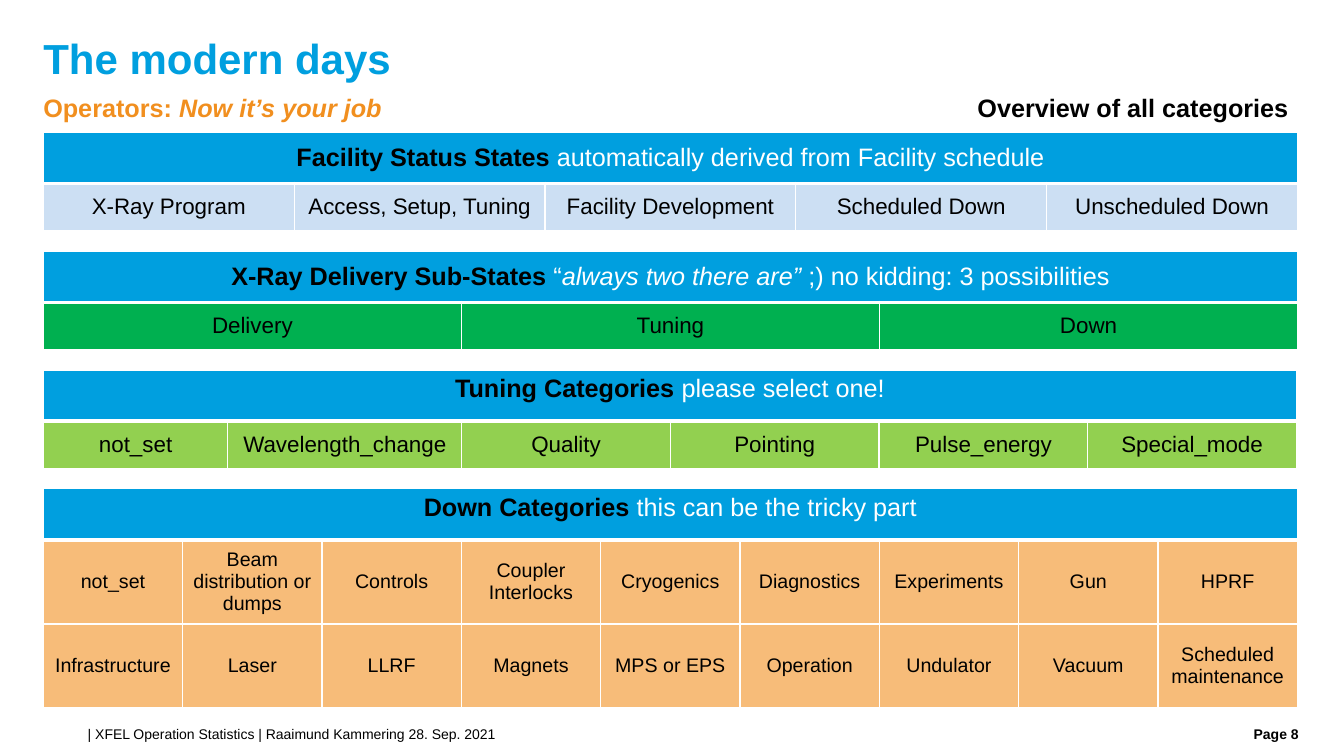
from dataclasses import dataclass

import lxml.etree
import pptx
import pptx.dml.color
import pptx.enum.text
import pptx.oxml.ns
import pptx.util

Inches = pptx.util.Inches
Align = pptx.enum.text.PP_ALIGN
Anchor = pptx.enum.text.MSO_ANCHOR
qn = pptx.oxml.ns.qn


# Theme: colours and type sizes
@dataclass(frozen=True)
class Theme:
    face: str = "Arial"
    blue: str = "009FDF"
    orange: str = "F18F1F"
    black: str = "000000"
    white: str = "FFFFFF"
    pale: str = "CCDFF3"
    green: str = "00B050"
    lime: str = "92D050"
    peach: str = "F7BC79"
    title: int = 30
    head: int = 18
    cell: int = 16
    small: int = 14
    foot: int = 10
    thin: int = 1
    thick: int = 3


T = Theme()
LEFT, WIDTH = 0.43, 12.44
TOP, STEP, HEAD = 1.31, 1.18, 0.51


@dataclass(frozen=True)
class Run:
    text: str
    color: str = T.white
    bold: bool = False
    italic: bool = False


@dataclass(frozen=True)
class Group:
    head: list[Run]
    rows: list[list[str]]
    fill: str
    size: int = T.cell
    high: float = 0.47
    anchor: Anchor = Anchor.MIDDLE
    cols: tuple[float, ...] = ()


GROUPS = [
    Group([Run("Facility Status States ", T.black, True),
           Run("automatically derived from Facility schedule")],
          [["X-Ray Program", "Access, Setup, Tuning", "Facility Development",
            "Scheduled Down", "Unscheduled Down"]], T.pale),
    Group([Run("X-Ray Delivery Sub-States ", T.black, True), Run("“"),
           Run("always two there are” ", italic=True),
           Run(";) no kidding: 3 possibilities")],
          [["Delivery", "Tuning", "Down"]], T.green),
    Group([Run("Tuning Categories ", T.black, True),
           Run("please select one!")],
          [["not_set", "Wavelength_change", "Quality", "Pointing",
            "Pulse_energy", "Special_mode"]], T.lime,
          anchor=Anchor.TOP, cols=(1.83, 2.32) + (2.07,) * 4),
    Group([Run("Down Categories ", T.black, True),
           Run("this can be the tricky part")],
          [["not_set", "Beam distribution or dumps", "Controls",
            "Coupler Interlocks", "Cryogenics", "Diagnostics",
            "Experiments", "Gun", "HPRF"],
           ["Infrastructure", "Laser", "LLRF", "Magnets", "MPS or EPS",
            "Operation", "Undulator", "Vacuum", "Scheduled maintenance"]],
          T.peach, T.small, 0.83, Anchor.TOP),
]


# Text helpers
def style(font, size: int, color: str, bold: bool = False,
          italic: bool = False) -> None:
    font.name = T.face
    font.size = pptx.util.Pt(size)
    font.bold = bold
    font.italic = italic
    font.color.rgb = pptx.dml.color.RGBColor.from_string(color)


def write(para, runs: list[Run], size: int) -> None:
    for item in runs:
        run = para.add_run()
        run.text = item.text
        style(run.font, size, item.color, item.bold, item.italic)


def bare(frame) -> None:
    frame.margin_left = frame.margin_right = 0
    frame.margin_top = frame.margin_bottom = 0
    frame.vertical_anchor = Anchor.TOP
    frame.word_wrap = True


def label(slide, left: float, top: float, width: float, high: float):
    box = slide.shapes.add_textbox(Inches(left), Inches(top),
                                   Inches(width), Inches(high))
    bare(box.text_frame)
    return box.text_frame.paragraphs[0]


# Table helpers
def border(cell, top: int, bottom: int) -> None:
    props = cell._tc.get_or_add_tcPr()
    sides = {"L": T.thin, "R": T.thin, "T": top, "B": bottom}
    for side, width in sides.items():
        line = lxml.etree.SubElement(props, qn(f"a:ln{side}"),
                                     w=str(pptx.util.Pt(width)))
        fill = lxml.etree.SubElement(line, qn("a:solidFill"))
        lxml.etree.SubElement(fill, qn("a:srgbClr"), val=T.white)


def paint(cell, color: str, anchor: Anchor) -> None:
    cell.fill.solid()
    cell.fill.fore_color.rgb = pptx.dml.color.RGBColor.from_string(color)
    cell.vertical_anchor = anchor
    cell.text_frame.paragraphs[0].alignment = Align.CENTER


def draw(slide, group: Group, top: float) -> None:
    count = len(group.rows[0])
    cols = group.cols or (WIDTH / count,) * count
    highs = [HEAD] + [group.high] * len(group.rows)
    table = slide.shapes.add_table(
        len(highs), count, Inches(LEFT), Inches(top),
        Inches(WIDTH), Inches(sum(highs))).table
    table.first_row = table.horz_banding = False
    for col, width in zip(table.columns, cols):
        col.width = Inches(width)
    for row, high in zip(table.rows, highs):
        row.height = Inches(high)

    # Heading bar
    for cell in table.rows[0].cells:
        border(cell, T.thin, T.thick)
        paint(cell, T.blue, group.anchor)
    bar = table.cell(0, 0)
    bar.merge(table.cell(0, count - 1))
    write(bar.text_frame.paragraphs[0], group.head, T.head)

    # Category cells
    for r, names in enumerate(group.rows, 1):
        for c, name in enumerate(names):
            cell = table.cell(r, c)
            border(cell, T.thick if r == 1 else T.thin, T.thin)
            cell.text = name
            paint(cell, group.fill, Anchor.MIDDLE)
            style(cell.text_frame.paragraphs[0].font, group.size, T.black)


def main() -> None:
    deck = pptx.Presentation()
    deck.slide_width, deck.slide_height = Inches(13.33), Inches(7.5)
    slide = deck.slides.add_slide(deck.slide_layouts[5])

    # Title
    title = slide.shapes.title
    title.left, title.top = Inches(LEFT), Inches(0.38)
    title.width, title.height = Inches(WIDTH), Inches(0.49)
    bare(title.text_frame)
    title.text_frame.text = "The modern days"
    para = title.text_frame.paragraphs[0]
    para.alignment, para.line_spacing = Align.LEFT, 0.9
    style(para.font, T.title, T.blue, True)

    # Subtitle with a right tab for the overview
    para = label(slide, LEFT, 0.89, WIDTH, 0.41)
    para.line_spacing = 1.1
    tabs = lxml.etree.SubElement(para._p.get_or_add_pPr(), qn("a:tabLst"))
    lxml.etree.SubElement(tabs, qn("a:tab"), pos=str(Inches(12.35)), algn="r")
    write(para, [Run("Operators: ", T.orange, True),
                 Run("Now it’s your job\t", T.orange, True, True),
                 Run("Overview of all categories", T.black, True)], T.head)

    # Category tables
    for i, group in enumerate(GROUPS):
        draw(slide, group, TOP + i * STEP)

    # Footer
    para = label(slide, 0.87, 7.2, 10.88, 0.2)
    para.text = "| XFEL Operation Statistics | Raaimund Kammering 28. Sep. 2021"
    style(para.font, T.foot, T.black)
    para = label(slide, 11.86, 7.2, 1.02, 0.2)
    para.text = "Page 8"
    para.alignment = Align.RIGHT
    style(para.font, T.foot, T.black, True)

    deck.save("out.pptx")


if __name__ == "__main__":
    main()
